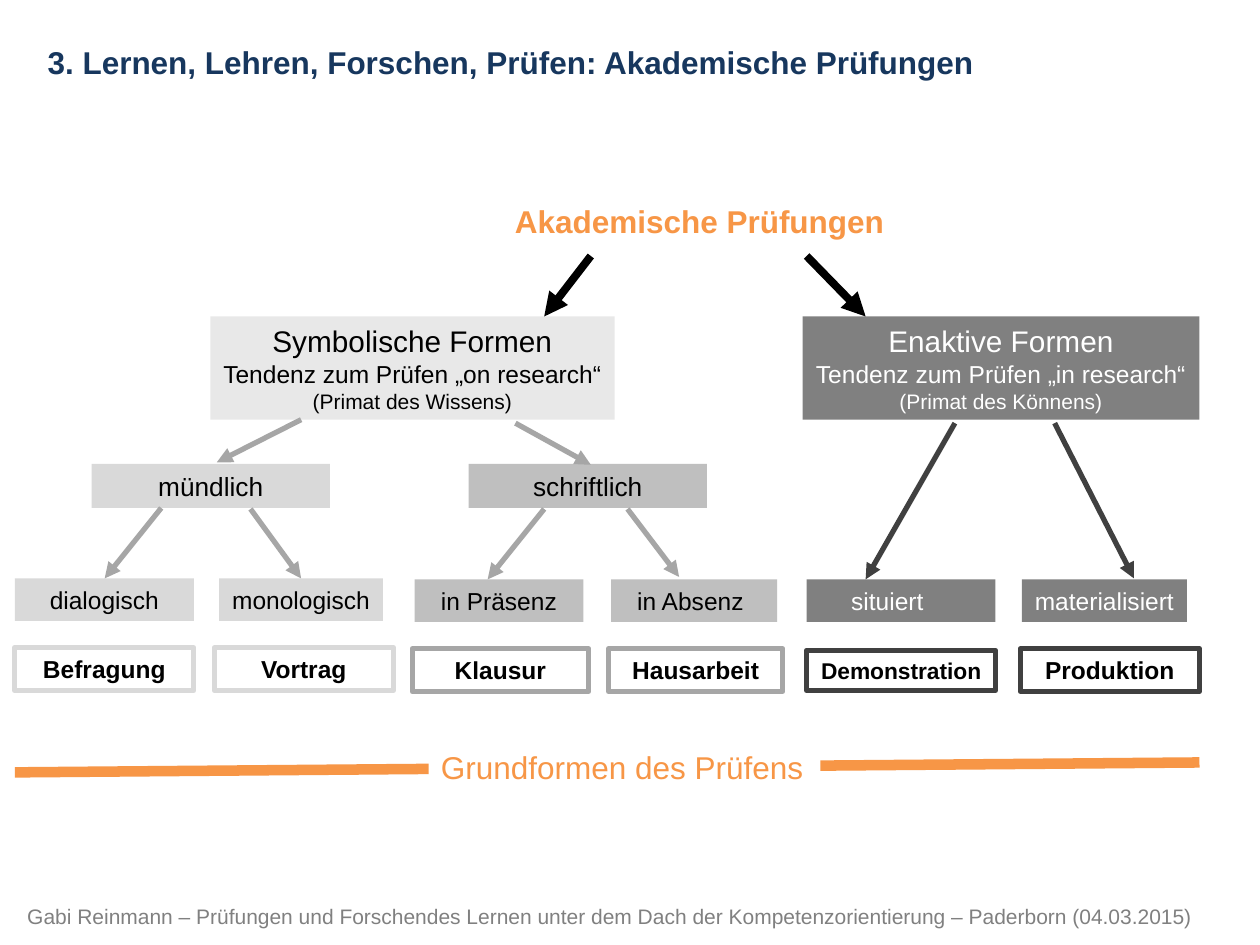
import lxml.etree
import pptx
import pptx.dml.color
import pptx.enum.shapes
import pptx.enum.text
import pptx.oxml.ns
import pptx.util

Cm = pptx.util.Cm
Pt = pptx.util.Pt
RGBColor = pptx.dml.color.RGBColor
qn = pptx.oxml.ns.qn

THEME = {
    "font": "Arial",
    "color": {
        "navy": "17375E", "orange": "F79646", "black": "000000", "white": "FFFFFF",
        "charcoal": "404040", "dark": "808080", "medium": "A6A6A6",
        "silver": "BFBFBF", "light": "D9D9D9", "pale": "E8E8E8",
    },
    "size": {"title": 18, "form": 17, "mode": 15, "body": 14, "compact": 13, "small": 12},
}


def add_box(position, paragraphs, color="black", bold=False, fill=None, outline=None,
            align="CENTER", right_inset=0.25):
    shape = slide.shapes.add_shape(
        pptx.enum.shapes.MSO_SHAPE.RECTANGLE, *[Cm(value) for value in position])
    shape.shadow.inherit = False
    if fill:
        shape.fill.solid()
        shape.fill.fore_color.rgb = RGBColor.from_string(THEME["color"][fill])
    else:
        shape.fill.background()
    if outline:
        shape.line.color.rgb = RGBColor.from_string(THEME["color"][outline])
        shape.line.width = Pt(3)
    else:
        shape.line.fill.background()
    frame = shape.text_frame
    frame.word_wrap = False
    frame.vertical_anchor = pptx.enum.text.MSO_ANCHOR.MIDDLE
    frame.margin_right = Cm(right_inset)
    for index, lines in enumerate(paragraphs):
        paragraph = frame.add_paragraph() if index else frame.paragraphs[0]
        paragraph.alignment = getattr(pptx.enum.text.PP_ALIGN, align)
        for number, (text, size) in enumerate(lines):
            if number:
                paragraph.add_line_break()
            run = paragraph.add_run()
            run.text = text
            run.font.name = THEME["font"]
            run.font.size = Pt(THEME["size"][size])
            run.font.bold = bold
            run.font.color.rgb = RGBColor.from_string(THEME["color"][color])


def add_line(ends, color, width, arrow=True):
    connector = slide.shapes.add_connector(
        pptx.enum.shapes.MSO_CONNECTOR.STRAIGHT, *[Cm(value) for value in ends])
    connector.line.color.rgb = RGBColor.from_string(THEME["color"][color])
    connector.line.width = Pt(width)
    if arrow:
        line = connector.line._get_or_add_ln()
        lxml.etree.SubElement(line, qn("a:tailEnd"), type="triangle")
    lxml.etree.SubElement(connector._element.spPr, qn("a:effectLst"))


presentation = pptx.Presentation()
presentation.slide_width = Cm(25.4)
presentation.slide_height = Cm(19.05)
slide = presentation.slides.add_slide(presentation.slide_layouts[6])

add_box((0.3, 18.08, 24.03, 0.76), [[(
    "Gabi Reinmann – Prüfungen und Forschendes Lernen unter dem Dach der "
    "Kompetenzorientierung – Paderborn (04.03.2015)", "small")]], "dark", align="LEFT")
add_box((0.71, 0.74, 19.38, 1.02), [[(
    "3. Lernen, Lehren, Forschen, Prüfen: Akademische Prüfungen", "title")]],
    "navy", bold=True, align="LEFT")
add_box((10.13, 3.94, 8.03, 1.02), [[("Akademische Prüfungen", "title")]],
        "orange", bold=True, align="LEFT")

forms = [
    (4.24, 8.15, "pale", "black", "Symbolische Formen",
     "Tendenz zum Prüfen „on research“", "(Primat des Wissens)"),
    (16.18, 8, "dark", "white", "Enaktive Formen",
     "Tendenz zum Prüfen „in research“", "(Primat des Könnens)"),
]
for left, width, fill, color, name, tendency, primacy in forms:
    add_box((left, 6.38, width, 2.08),
            [[(name, "form"), (tendency, "body")], [(primacy, "small")]], color, fill=fill)

for left, fill, mode in [(1.85, "light", "mündlich"), (9.45, "silver", "schriftlich")]:
    add_box((left, 9.35, 4.8, 0.89), [[(mode, "mode")]], fill=fill)

variants = [
    (0.3, 11.66, 3.61, "light", "black", "dialogisch", 0.25),
    (4.42, 11.66, 3.3, "light", "black", "monologisch", 0.25),
    (8.36, 11.68, 3.4, "silver", "black", "in Präsenz", 0.25),
    (12.32, 11.68, 3.35, "silver", "black", "in Absenz", 0.4),
    (16.26, 11.68, 3.81, "dark", "white", "situiert", 0.8),
    (20.6, 11.68, 3.33, "dark", "white", "materialisiert", 0.25),
]
for left, top, width, fill, color, text, inset in variants:
    add_box((left, top, width, 0.86), [[(text, "body")]], color, fill=fill, right_inset=inset)

exams = [
    (0.3, 13.06, 3.61, 0.86, "light", "Befragung", "body"),
    (4.32, 13.06, 3.61, 0.86, "light", "Vortrag", "body"),
    (8.31, 13.08, 3.56, 0.86, "medium", "Klausur", "body"),
    (12.27, 13.08, 3.51, 0.86, "medium", "Hausarbeit", "body"),
    (16.26, 13.11, 3.81, 0.81, "charcoal", "Demonstration", "compact"),
    (20.57, 13.08, 3.61, 0.86, "charcoal", "Produktion", "body"),
]
for *position, outline, text, size in exams:
    add_box(position, [[(text, size)]], bold=True, outline=outline)

arrows = {
    ("black", 4.5): [(11.91, 5.16, 10.97, 6.38), (16.26, 5.16, 17.45, 6.38)],
    ("medium", 3): [
        (6.07, 8.46, 4.37, 9.32), (10.39, 8.53, 11.91, 9.37),
        (3.25, 10.24, 2.11, 11.66), (5.05, 10.26, 6.07, 11.66),
        (10.97, 10.26, 9.83, 11.68), (12.65, 10.26, 13.69, 11.63)],
    ("charcoal", 3): [(19.25, 8.53, 17.45, 11.68), (21.26, 8.53, 22.86, 11.66)],
}
for (color, width), routes in arrows.items():
    for ends in routes:
        add_line(ends, color, width)

add_line((0.3, 15.57, 24.18, 15.37), "orange", 6, arrow=False)
add_box((8.64, 14.96, 7.9, 1.02), [[("Grundformen des Prüfens", "title")]],
        "orange", fill="white", align="LEFT")

presentation.save("out.pptx")
